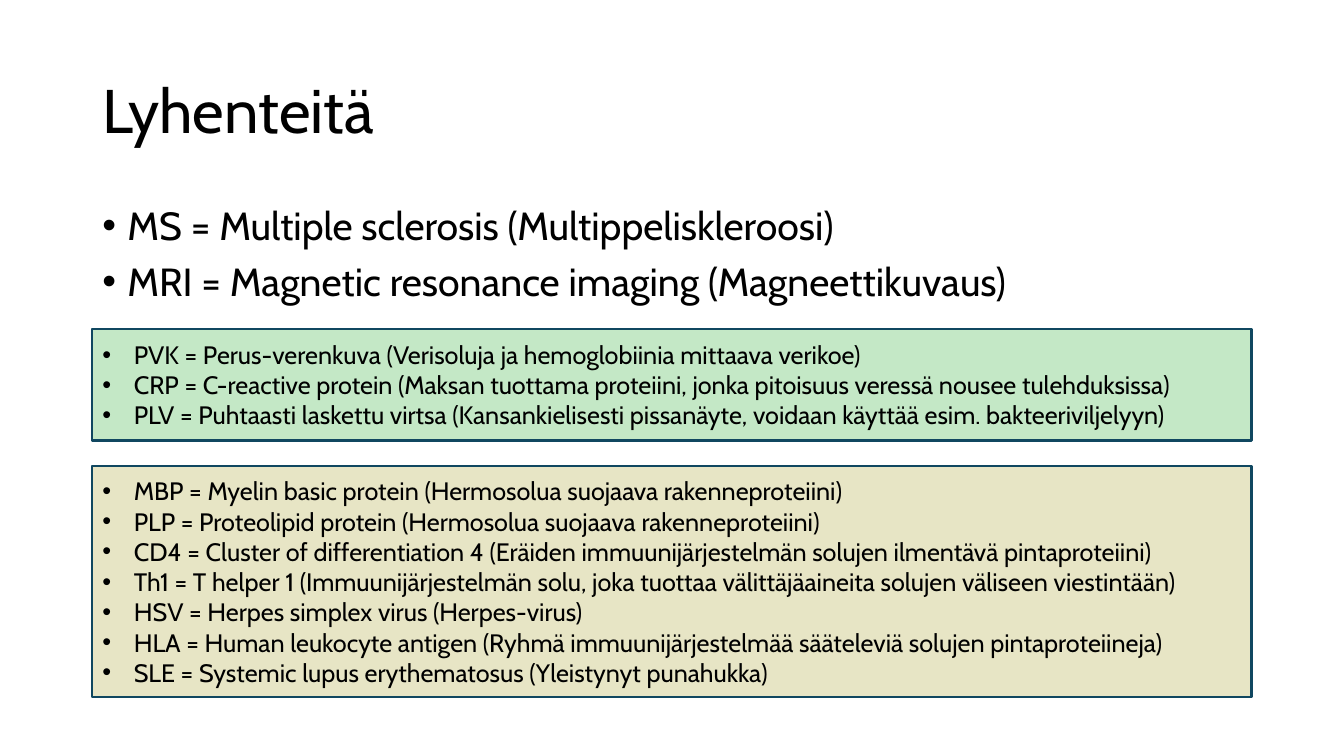
from lxml import etree
from pptx import Presentation
from pptx.dml.color import RGBColor
from pptx.enum.shapes import MSO_SHAPE
from pptx.enum.text import MSO_ANCHOR, PP_ALIGN
from pptx.oxml.ns import qn
from pptx.util import Pt

RECT = MSO_SHAPE.RECTANGLE
TOP, MIDDLE = MSO_ANCHOR.TOP, MSO_ANCHOR.MIDDLE
LEFT = PP_ALIGN.LEFT

BLACK = RGBColor(0x00, 0x00, 0x00)
NAVY = RGBColor(0x10, 0x47, 0x60)
GREEN = RGBColor(0xC4, 0xE8, 0xC6)
SAND = RGBColor(0xE7, 0xE5, 0xC5)

FONT = "Cabin"
EDGE, WIDTH = 66, 828

MAIN = [
    "MS = Multiple sclerosis (Multippeliskleroosi)",
    "MRI = Magnetic resonance imaging (Magneettikuvaus)",
]
TESTS = [
    "PVK = Perus-verenkuva (Verisoluja ja hemoglobiinia mittaava verikoe)",
    "CRP = C-reactive protein (Maksan tuottama proteiini, jonka pitoisuus veressä nousee tulehduksissa)",
    "PLV = Puhtaasti laskettu virtsa (Kansankielisesti pissanäyte, voidaan käyttää esim. bakteeriviljelyyn)",
]
TERMS = [
    "MBP = Myelin basic protein (Hermosolua suojaava rakenneproteiini)",
    "PLP = Proteolipid protein (Hermosolua suojaava rakenneproteiini)",
    "CD4 = Cluster of differentiation 4 (Eräiden immuunijärjestelmän solujen ilmentävä pintaproteiini)",
    "Th1 = T helper 1 (Immuunijärjestelmän solu, joka tuottaa välittäjäaineita solujen väliseen viestintään)",
    "HSV = Herpes simplex virus (Herpes-virus)",
    "HLA = Human leukocyte antigen (Ryhmä immuunijärjestelmää sääteleviä solujen pintaproteiineja)",
    "SLE = Systemic lupus erythematosus (Yleistynyt punahukka)",
]


def add_bullet(para, indent):
    props = para._p.get_or_add_pPr()
    props.set("marL", str(Pt(indent)))
    props.set("indent", str(-Pt(indent)))
    font = etree.SubElement(props, qn("a:buFont"))
    font.set("typeface", "Arial")
    etree.SubElement(props, qn("a:buChar")).set("char", "•")


def fill_text(shape, lines, size, anchor, indent=0, gap=0, leading=1.0):
    frame = shape.text_frame
    frame.word_wrap = True
    frame.vertical_anchor = anchor
    frame.text = "\n".join(lines)
    for index, para in enumerate(frame.paragraphs):
        if indent:
            add_bullet(para, indent)
        para.alignment = LEFT
        para.line_spacing = leading
        if index and gap:
            para.space_before = Pt(gap)
        para.font.name = FONT
        para.font.size = Pt(size)
        para.font.color.rgb = BLACK


def add_text(slide, top, height, lines, size, anchor, **style):
    box = slide.shapes.add_textbox(Pt(EDGE), Pt(top), Pt(WIDTH), Pt(height))
    fill_text(box, lines, size, anchor, leading=0.9, **style)


def add_panel(slide, top, height, lines, color):
    panel = slide.shapes.add_shape(RECT, Pt(EDGE), Pt(top), Pt(WIDTH), Pt(height))
    panel.shadow.inherit = False
    panel.fill.solid()
    panel.fill.fore_color.rgb = color
    panel.line.color.rgb = NAVY
    panel.line.width = Pt(1.5)
    fill_text(panel, lines, 18, MIDDLE, indent=22.5)


def main():
    deck = Presentation()
    deck.slide_width, deck.slide_height = Pt(960), Pt(540)
    slide = deck.slides.add_slide(deck.slide_layouts[6])

    # Title and main abbreviations
    add_text(slide, 28.75, 104.4, ["Lyhenteitä"], 44, MIDDLE)
    add_text(slide, 143.75, 188.6, MAIN, 28, TOP, indent=18, gap=10)

    # Panels of laboratory tests and immunology terms
    add_panel(slide, 332.6, 165.6, TERMS, SAND)
    add_panel(slide, 234.7, 80, TESTS, GREEN)

    deck.save("out.pptx")


if __name__ == "__main__":
    main()
